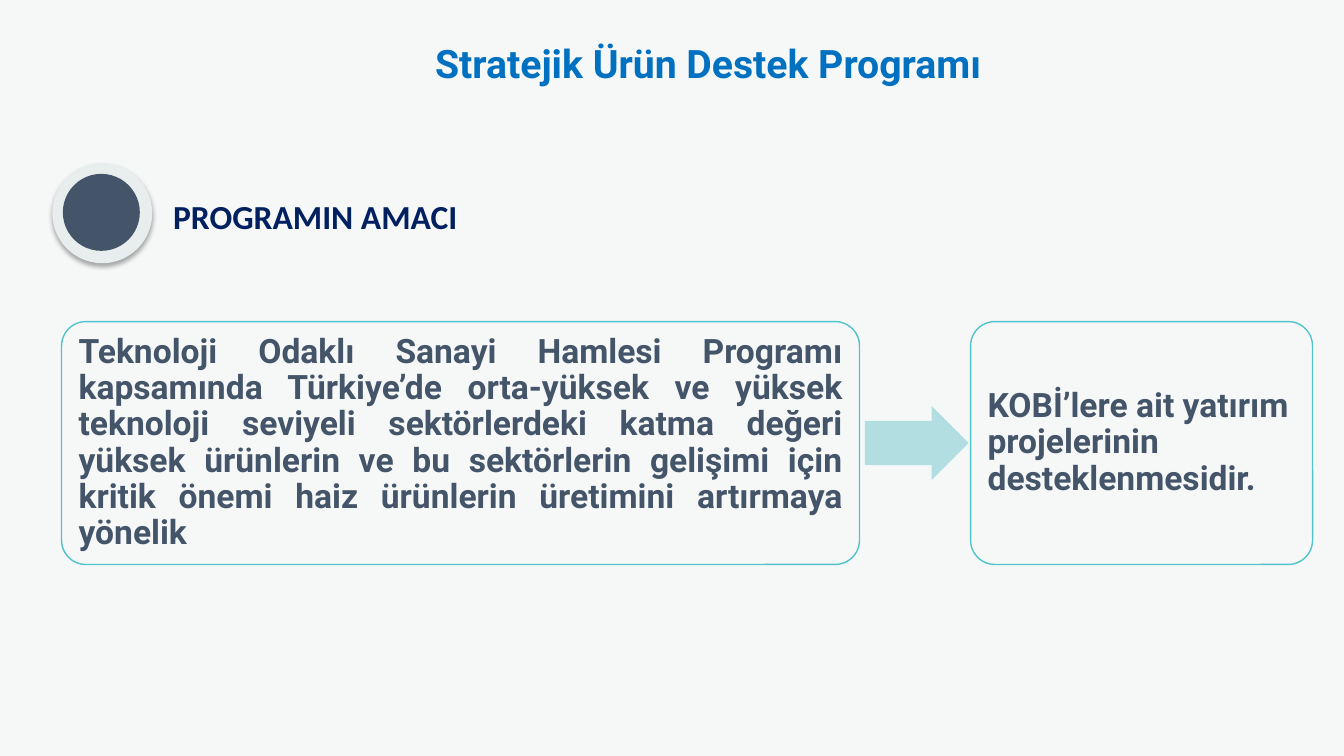
from dataclasses import dataclass

from lxml.etree import SubElement
from pptx import Presentation
from pptx.dml.color import RGBColor
from pptx.enum.shapes import MSO_SHAPE as Shape
from pptx.enum.text import MSO_ANCHOR as Anchor, PP_ALIGN as Align
from pptx.oxml.ns import qn
from pptx.util import Pt


@dataclass(frozen=True)
class Theme:
    background: str = "F6F8F8"
    title: str = "0070C0"
    heading: str = "002060"
    body: str = "445469"
    card_line: str = "51C3CA"
    arrow: str = "B3DEE1"
    ring: str = "E8EDED"
    shadow: str = "000000"
    font: str = "Roboto"
    heading_font: str = "Calibri"
    title_size: int = 28
    text_size: int = 24


@dataclass(frozen=True)
class Box:
    left: float
    top: float
    width: float
    height: float

    def lengths(self):
        return [Pt(v) for v in (self.left, self.top, self.width, self.height)]


THEME = Theme()
PURPOSE = (
    "Teknoloji Odaklı Sanayi Hamlesi Programı kapsamında Türkiye’de "
    "orta-yüksek ve yüksek teknoloji seviyeli sektörlerdeki katma değeri "
    "yüksek ürünlerin ve bu sektörlerin gelişimi için kritik önemi haiz "
    "ürünlerin üretimini artırmaya yönelik"
)
OUTCOME = "KOBİ’lere ait yatırım projelerinin desteklenmesidir."


def add_filled(slide, kind, box, color, line=None):
    shape = slide.shapes.add_shape(kind, *box.lengths())
    shape.shadow.inherit = False
    shape.fill.solid()
    shape.fill.fore_color.rgb = RGBColor.from_string(color)
    if line:
        shape.line.color.rgb = RGBColor.from_string(line)
        shape.line.width = Pt(1)
    else:
        shape.line.fill.background()
    return shape


def write(frame, text, color, align, size=THEME.text_size, font=THEME.font,
          anchor=Anchor.MIDDLE, spacing=0.9):
    frame.word_wrap = True
    frame.vertical_anchor = anchor
    paragraph = frame.paragraphs[0]
    paragraph.alignment = align
    paragraph.line_spacing = spacing
    run = paragraph.add_run()
    run.text = text
    run.font.name = font
    run.font.size = Pt(size)
    run.font.bold = True
    run.font.color.rgb = RGBColor.from_string(color)


def add_soft_shadow(shape):
    effects = shape._element.spPr.find(qn("a:effectLst"))
    outer = SubElement(effects, qn("a:outerShdw"), blurRad=str(Pt(3.5)),
                       dist=str(Pt(2.2)), dir="5400000", rotWithShape="0")
    color = SubElement(outer, qn("a:srgbClr"), val=THEME.shadow)
    SubElement(color, qn("a:alpha"), val="32000")


def add_title(slide, box):
    title = slide.shapes.add_textbox(*box.lengths())
    write(title.text_frame, "Stratejik Ürün Destek Programı", THEME.title,
          Align.CENTER, size=THEME.title_size)


def add_heading(slide, box):
    ring_size, dot_size = box.height, 55
    ring = add_filled(slide, Shape.OVAL,
                      Box(box.left, box.top, ring_size, ring_size), THEME.ring)
    add_soft_shadow(ring)
    add_filled(slide, Shape.OVAL,
               Box(box.left + 7.5, box.top + 7.5, dot_size, dot_size), THEME.body)
    label_left = ring_size + 2
    label_box = Box(box.left + label_left, box.top + 20,
                    box.width - label_left, 36)
    label = slide.shapes.add_textbox(*label_box.lengths())
    write(label.text_frame, "PROGRAMIN AMACI", THEME.heading, Align.CENTER,
          font=THEME.heading_font, anchor=Anchor.TOP, spacing=1.0)


def add_card(slide, box, text, align):
    card = add_filled(slide, Shape.ROUNDED_RECTANGLE, box,
                      THEME.background, THEME.card_line)
    card.adjustments[0] = 0.1
    frame = card.text_frame
    frame.margin_left = frame.margin_right = Pt(7.2)
    frame.margin_top = frame.margin_bottom = Pt(7.2)
    write(frame, text, THEME.body, align)


def add_purpose_flow(slide, box):
    purpose_width, outcome_width = 570, 244.3
    arrow_width, arrow_height = 74, 52.6
    add_card(slide, Box(box.left, box.top, purpose_width, box.height),
             PURPOSE, Align.JUSTIFY)
    arrow_box = Box(box.left + purpose_width + 3.8,
                    box.top + (box.height - arrow_height) / 2,
                    arrow_width, arrow_height)
    arrow = add_filled(slide, Shape.RIGHT_ARROW, arrow_box, THEME.arrow)
    arrow.adjustments[0] = 0.6
    arrow.adjustments[1] = 0.5
    outcome_left = box.left + box.width - outcome_width
    add_card(slide, Box(outcome_left, box.top, outcome_width, box.height),
             OUTCOME, Align.LEFT)


def main():
    deck = Presentation()
    deck.slide_width, deck.slide_height = Pt(960), Pt(540)
    slide = deck.slides.add_slide(deck.slide_layouts[6])
    slide.background.fill.solid()
    slide.background.fill.fore_color.rgb = RGBColor.from_string(THEME.background)
    add_purpose_flow(slide, Box(44, 229.7, 893.6, 173.5))
    add_heading(slide, Box(37.4, 116.7, 302.4, 71.3))
    add_title(slide, Box(51.6, 5.8, 908.4, 82))
    deck.save("out.pptx")


if __name__ == "__main__":
    main()
